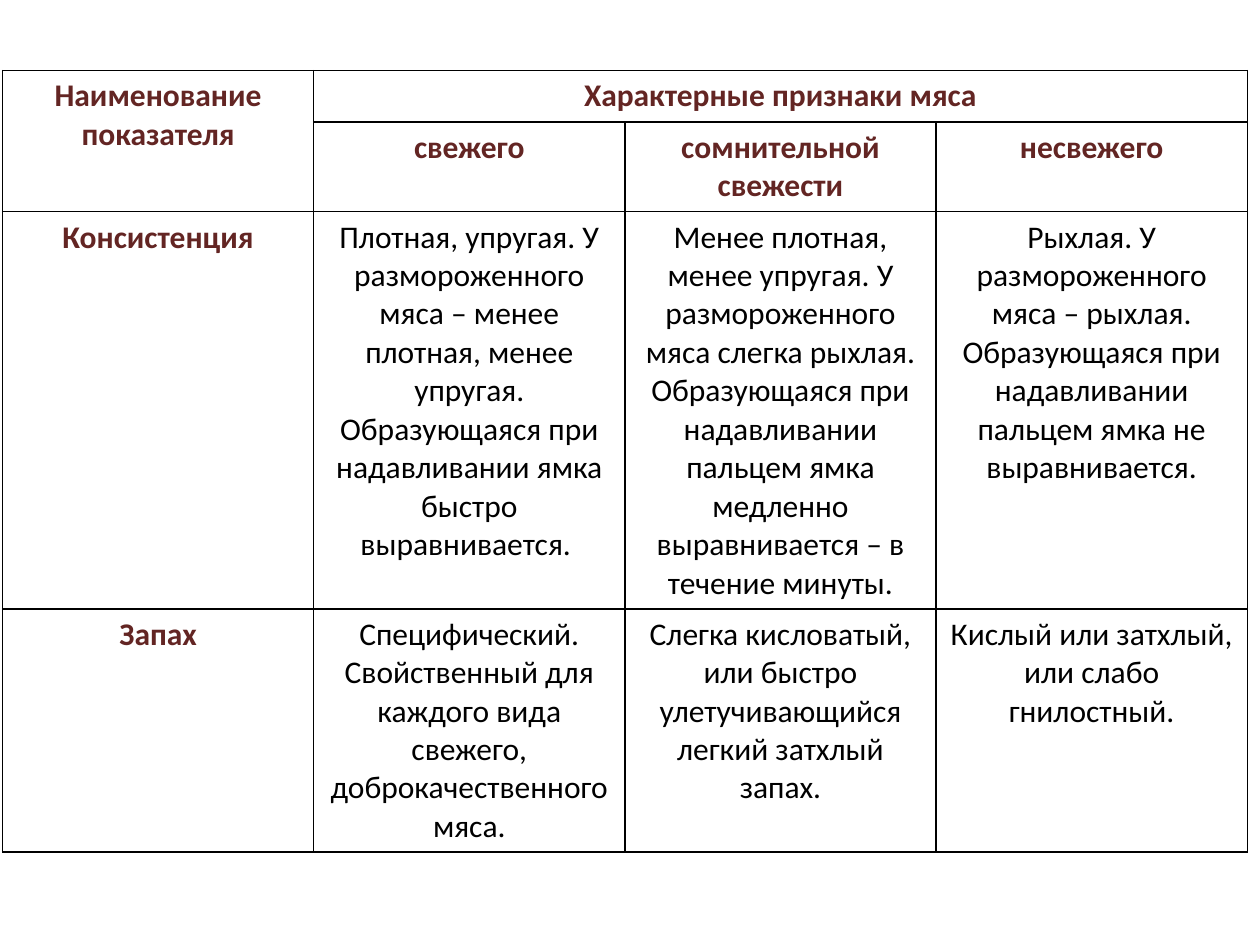
from lxml import etree
from pptx import Presentation
from pptx.dml.color import RGBColor
from pptx.enum.text import PP_ALIGN
from pptx.oxml.ns import qn
from pptx.util import Inches, Pt

CENTER = PP_ALIGN.CENTER
HEADING_COLOR = "632523"
BODY_COLOR = "000000"
COLUMN_WIDTH = 2.47
ROW_HEIGHTS = [0.41, 0.71, 3.15, 1.93]

ROWS = [
    ["Наименование показателя", "Характерные признаки мяса", "", ""],
    ["", "свежего", "сомнительной свежести", "несвежего"],
    [
        "Консистенция",
        "Плотная, упругая. У размороженного мяса – менее плотная, менее упругая. "
        "Образующаяся при надавливании ямка быстро выравнивается. ",
        "Менее плотная, менее упругая. У размороженного мяса слегка рыхлая. "
        "Образующаяся при надавливании пальцем ямка медленно выравнивается – "
        "в течение минуты.",
        "Рыхлая. У размороженного мяса – рыхлая. Образующаяся при надавливании "
        "пальцем ямка не выравнивается.",
    ],
    [
        "Запах",
        "Специфический. Свойственный для каждого вида свежего, "
        "доброкачественного мяса.",
        "Слегка кисловатый, или быстро улетучивающийся легкий затхлый запах.",
        "Кислый или затхлый, или слабо гнилостный.",
    ],
]


def write_text(cell, text, *, color, bold=False, size=18, font="Calibri"):
    paragraph = cell.text_frame.paragraphs[0]
    paragraph.alignment = CENTER
    run = paragraph.add_run()
    run.text = text
    run.font.name = font
    run.font.size = Pt(size)
    run.font.bold = bold
    run.font.color.rgb = RGBColor.from_string(color)


def add_borders(cell, color="000000", width=1):
    """Draw all four sides; call before the fill, which must follow the lines."""
    properties = cell._tc.get_or_add_tcPr()
    for side in ("a:lnL", "a:lnR", "a:lnT", "a:lnB"):
        line = etree.SubElement(properties, qn(side), w=str(Pt(width)))
        fill = etree.SubElement(line, qn("a:solidFill"))
        etree.SubElement(fill, qn("a:srgbClr"), val=color)


prs = Presentation()
prs.slide_width = Inches(10)
prs.slide_height = Inches(7.5)
slide = prs.slides.add_slide(prs.slide_layouts[6])

meat_signs = slide.shapes.add_table(
    len(ROWS), len(ROWS[0]), Inches(0.02), Inches(0.56),
    Inches(COLUMN_WIDTH * len(ROWS[0])), Inches(sum(ROW_HEIGHTS)),
).table
for column in meat_signs.columns:
    column.width = Inches(COLUMN_WIDTH)
for row, height in zip(meat_signs.rows, ROW_HEIGHTS):
    row.height = Inches(height)

meat_signs.cell(0, 0).merge(meat_signs.cell(1, 0))
meat_signs.cell(0, 1).merge(meat_signs.cell(0, 3))

for r, texts in enumerate(ROWS):
    for c, text in enumerate(texts):
        cell = meat_signs.cell(r, c)
        add_borders(cell)
        cell.fill.background()
        if text:
            heading = r < 2 or c == 0
            write_text(cell, text, bold=heading,
                       color=HEADING_COLOR if heading else BODY_COLOR)

prs.save("out.pptx")
